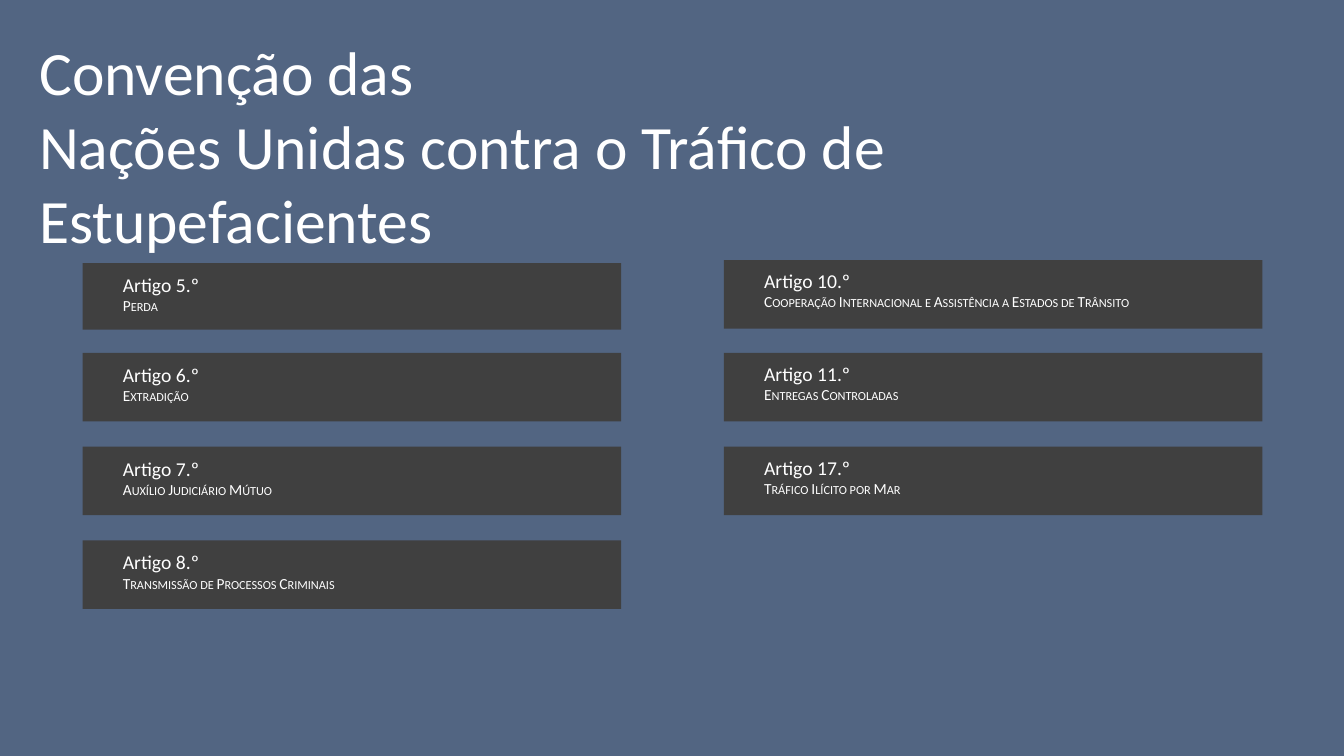
from pptx import Presentation
from pptx.dml.color import RGBColor
from pptx.enum.shapes import MSO_SHAPE
from pptx.enum.text import MSO_ANCHOR
from pptx.util import Inches, Pt

FONT = "Calibri"
BACKGROUND, CARD_FILL, WHITE = "526582", "404040", "FFFFFF"
CARD_WIDTH, CARD_HEIGHT = 5.34, 0.68
ROW_TOP, ROW_PITCH = 3.5, 0.93

TITLE = ["Convenção das", "Nações Unidas contra o Tráfico de Estupefacientes"]
LEFT_ARTICLES = [
    ("Artigo 5.º", "Perda"),
    ("Artigo 6.º", "Extradição"),
    ("Artigo 7.º", "Auxílio Judiciário Mútuo"),
    ("Artigo 8.º", "Transmissão de Processos Criminais"),
]
RIGHT_ARTICLES = [
    ("Artigo 10.º", "Cooperação Internacional e Assistência a Estados de Trânsito"),
    ("Artigo 11.º", "Entregas Controladas"),
    ("Artigo 17.º", "Tráfico Ilícito por Mar"),
]


def color(value):
    return RGBColor.from_string(value)


def add_text(shapes, left, top, width, height, lines, sizes):
    box = shapes.add_textbox(Inches(left), Inches(top), Inches(width), Inches(height))
    frame = box.text_frame
    frame.word_wrap = True
    frame.vertical_anchor = MSO_ANCHOR.TOP
    frame.text = "\n".join(lines)
    for para, size in zip(frame.paragraphs, sizes):
        for span in para.runs:
            span.font.name = FONT
            span.font.size = Pt(size)
            span.font.color.rgb = color(WHITE)
    return frame


def add_card(page, left, top, height, text_offset, text_height, article):
    """Group a dark bar with an article number and its small-caps subject."""
    group = page.shapes.add_group_shape()
    bar = group.shapes.add_shape(
        MSO_SHAPE.RECTANGLE, Inches(left), Inches(top), Inches(CARD_WIDTH), Inches(height)
    )
    bar.shadow.inherit = False
    bar.fill.solid()
    bar.fill.fore_color.rgb = color(CARD_FILL)
    bar.line.fill.background()
    frame = add_text(
        group.shapes, left + 0.3, top + text_offset, 4.71, text_height, article, (14, 11)
    )
    subject = frame.paragraphs[1].runs[0]
    subject.font._element.set("cap", "small")


def add_column(page, left, first_top, first_height, text_offset, text_height, articles):
    """Stack cards at an even pitch; the first card has its own top and height."""
    for row, article in enumerate(articles):
        top = first_top if row == 0 else ROW_TOP + (row - 1) * ROW_PITCH
        height = first_height if row == 0 else CARD_HEIGHT
        add_card(page, left, top, height, text_offset, text_height, article)


def build_articles_slide(deck):
    page = deck.slides.add_slide(deck.slide_layouts[6])
    page.background.fill.solid()
    page.background.fill.fore_color.rgb = color(BACKGROUND)
    add_text(page.shapes, 0.29, 0.29, 11.65, 2.32, TITLE, (44, 44))
    add_column(page, 0.82, 2.61, 0.66, 0.05, 0.54, LEFT_ARTICLES)
    add_column(page, 7.18, 2.58, 0.68, 0.04, 0.52, RIGHT_ARTICLES)


def main():
    deck = Presentation()
    deck.slide_width, deck.slide_height = Inches(13.33), Inches(7.5)
    build_articles_slide(deck)
    deck.save("out.pptx")


if __name__ == "__main__":
    main()
